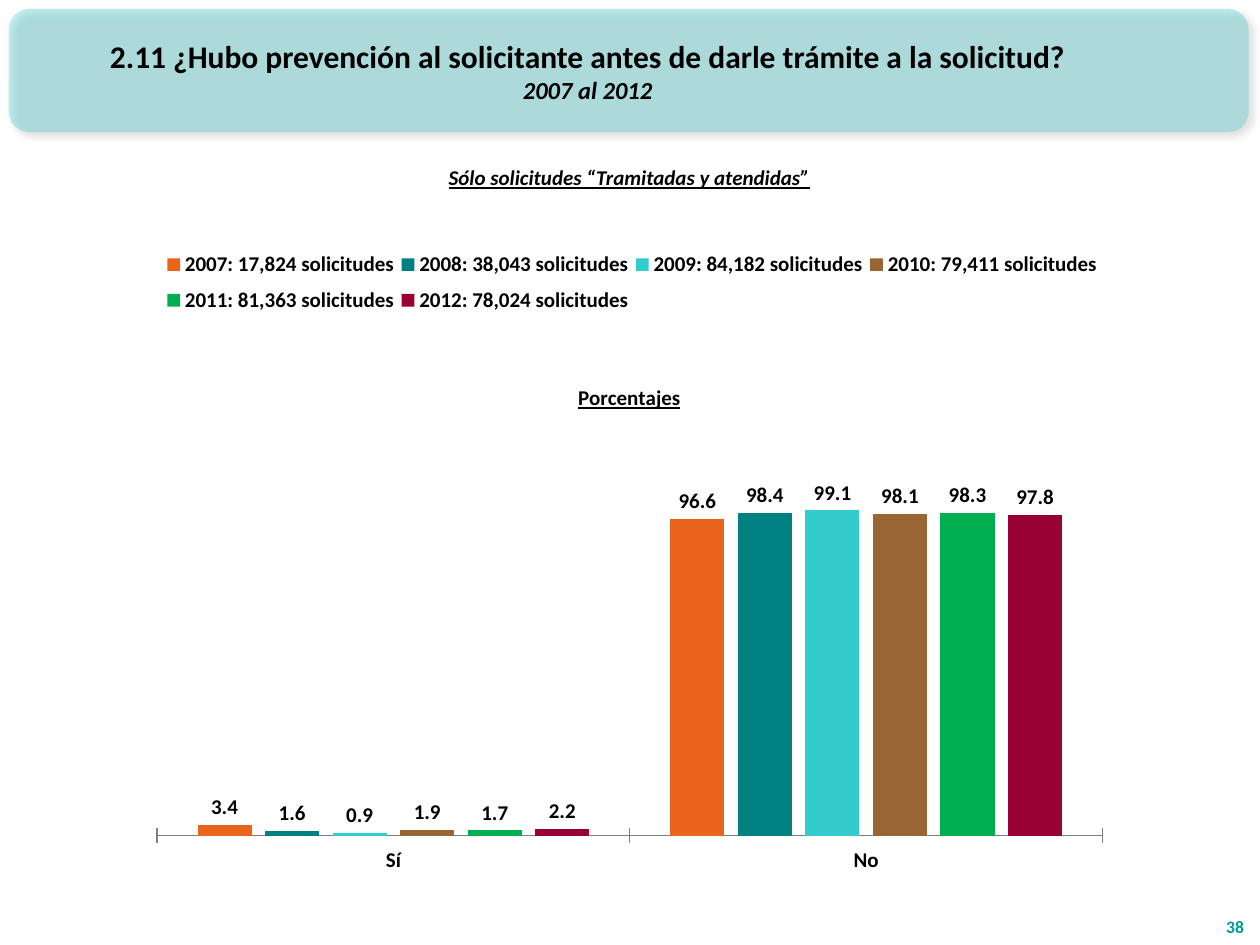
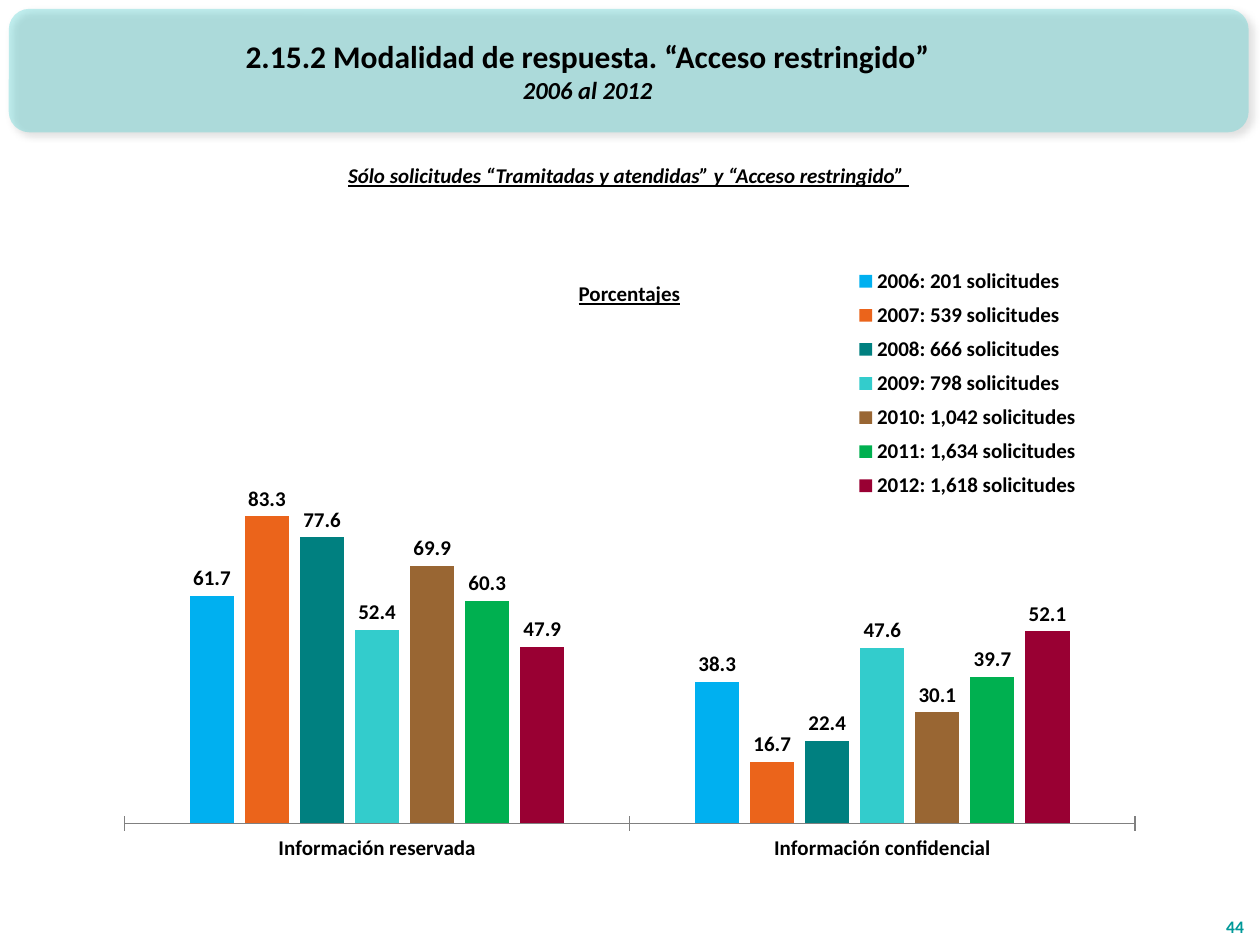
from dataclasses import dataclass

from lxml import etree
from pptx import Presentation
from pptx.chart.data import CategoryChartData
from pptx.dml.color import RGBColor
from pptx.enum.chart import XL_CHART_TYPE, XL_LABEL_POSITION, XL_LEGEND_POSITION, XL_TICK_MARK
from pptx.enum.shapes import MSO_SHAPE
from pptx.enum.text import MSO_ANCHOR, PP_ALIGN
from pptx.oxml import parse_xml
from pptx.oxml.ns import nsdecls, qn
from pptx.util import Inches, Pt

COLUMNS = XL_CHART_TYPE.COLUMN_CLUSTERED
OUTSIDE_END = XL_LABEL_POSITION.OUTSIDE_END
LEGEND_TOP = XL_LEGEND_POSITION.TOP
TICK_CROSS, TICK_NONE = XL_TICK_MARK.CROSS, XL_TICK_MARK.NONE
ROUNDED = MSO_SHAPE.ROUNDED_RECTANGLE
TOP, MIDDLE, BOTTOM = MSO_ANCHOR.TOP, MSO_ANCHOR.MIDDLE, MSO_ANCHOR.BOTTOM
CENTER, RIGHT = PP_ALIGN.CENTER, PP_ALIGN.RIGHT


@dataclass(frozen=True)
class Theme:
    font: str = "Calibri"
    ink: str = "000000"
    band: str = "33CCCC"
    page_number: str = "009999"
    axis: str = "808080"
    title_size: int = 18
    period_size: int = 14
    body_size: int = 12
    number_size: int = 10


THEME = Theme()
YEAR_COLORS = {
    2006: "00B0F0", 2007: "EB641B", 2008: "008080", 2009: "33CCCC",
    2010: "996633", 2011: "00B050", 2012: "990033",
}

# Text formats
TITLE = {"size": Pt(THEME.title_size), "bold": True}
PERIOD = {"size": Pt(THEME.period_size), "bold": True, "italic": True}
BODY = {"size": Pt(THEME.body_size), "bold": True}
HEADING = {**BODY, "underline": True}
SCOPE = {**HEADING, "italic": True}
NUMBER = {"size": Pt(THEME.number_size), "bold": True}


@dataclass(frozen=True)
class Box:
    left: int
    top: int
    width: int
    height: int

    def inner(self, x, y, w, h):
        """Inner box given in percent of this one."""
        return Box(int(self.left + self.width * x / 100), int(self.top + self.height * y / 100),
                   int(self.width * w / 100), int(self.height * h / 100))

    @property
    def place(self):
        return self.left, self.top, self.width, self.height


PAGE = Box(0, 0, Inches(10), Inches(7.5))


def apply(target, values):
    for name, value in values.items():
        setattr(target, name, value)


def style_font(font, values, color=THEME.ink):
    apply(font, {"name": THEME.font, **values})
    font.color.rgb = RGBColor.from_string(color)


def add_text(slide, box, lines, anchor=TOP, align=CENTER, color=THEME.ink):
    """Write (text, format) pairs, one paragraph each."""
    frame = slide.shapes.add_textbox(*box.place).text_frame
    apply(frame, {"word_wrap": True, "vertical_anchor": anchor})
    for index, (text, values) in enumerate(lines):
        paragraph = frame.add_paragraph() if index else frame.paragraphs[0]
        paragraph.alignment = align
        run = paragraph.add_run()
        run.text = text
        style_font(run.font, values, color)


def title_band(slide, box, title, period):
    # Translucent band with a soft shadow
    band = slide.shapes.add_shape(ROUNDED, *box.inner(0.7, 6.67, 98.4, 93.33).place)
    band.fill.solid()
    band.fill.fore_color.rgb = RGBColor.from_string(THEME.band)
    band.line.fill.background()
    properties = band._element.spPr
    tint = properties.find(qn("a:solidFill"))[0]
    etree.SubElement(tint, qn("a:alpha"), val="30000")
    properties.append(parse_xml(
        f'<a:effectLst {nsdecls("a")}><a:outerShdw blurRad="{Pt(4)}" dist="{Pt(3)}"'
        ' dir="2700000" algn="tl" rotWithShape="0"><a:srgbClr val="000000">'
        '<a:alpha val="40000"/></a:srgbClr></a:outerShdw></a:effectLst>'))
    # Title and period
    add_text(slide, box.inner(0.8, 8.57, 91.7, 89.52), [(title, TITLE), (period, PERIOD)], MIDDLE)


def set_layout(element, index, **percents):
    """Fix the place of a chart element, in percent of the chart."""
    for old in element.findall(qn("c:layout")):
        element.remove(old)
    layout = etree.Element(qn("c:layout"))
    manual = etree.SubElement(layout, qn("c:manualLayout"))
    if index == 0:
        etree.SubElement(manual, qn("c:layoutTarget"), val="inner")
    for axis in "xy":
        etree.SubElement(manual, qn(f"c:{axis}Mode"), val="edge")
    for side, percent in percents.items():
        etree.SubElement(manual, qn(f"c:{side}"), val=f"{percent / 100:.4f}")
    element.insert(index, layout)


def percentage_chart(slide, box, content):
    # Values by answer and year
    data = CategoryChartData(number_format="0.0")
    data.categories = content["answers"]
    for year, (requests, *shares) in content["years"].items():
        data.add_series(f"{year}: {requests:,} solicitudes", shares)
    chart = slide.shapes.add_chart(COLUMNS, *box.place, data).chart
    style_font(chart.font, BODY)

    # Columns and their labels
    plot = chart.plots[0]
    apply(plot, {"gap_width": content["gap"], "overlap": -25,
                 "vary_by_categories": False, "has_data_labels": True})
    apply(plot.data_labels, {"show_value": True, "number_format": "0.0",
                             "number_format_is_linked": False, "position": OUTSIDE_END})
    for year, series in zip(content["years"], plot.series):
        series.format.fill.solid()
        series.format.fill.fore_color.rgb = RGBColor.from_string(YEAR_COLORS[year])
    set_layout(chart._chartSpace.chart.plotArea, 0, **content["plot"])

    # Axes
    apply(chart.value_axis, {"visible": False, "has_major_gridlines": False,
                             "minimum_scale": 0, "maximum_scale": content["maximum"]})
    apply(chart.category_axis, {"major_tick_mark": TICK_CROSS, "minor_tick_mark": TICK_NONE})
    chart.category_axis.format.line.color.rgb = RGBColor.from_string(THEME.axis)

    # Legend
    chart.has_legend = True
    apply(chart.legend, {"position": LEGEND_TOP, "include_in_layout": False})
    set_layout(chart.legend._element, 1, **content["legend"])

    # Heading inside the chart
    chart.has_title = "heading" in content
    if chart.has_title:
        run = chart.chart_title.text_frame.paragraphs[0].add_run()
        run.text = "Porcentajes"
        style_font(run.font, HEADING)
        set_layout(chart.chart_title._element, 1, **content["heading"])


def chart_slide(deck, content):
    slide = deck.slides.add_slide(deck.slide_layouts[6])
    title_band(slide, PAGE.inner(0, 0, 100, 14), content["title"], content["period"])
    percentage_chart(slide, PAGE.inner(*content["chart_box"]), content)
    add_text(slide, PAGE.inner(*content["scope_box"]), [(content["scope"], SCOPE)])
    if "heading_box" in content:
        add_text(slide, PAGE.inner(*content["heading_box"]), [("Porcentajes", HEADING)])
    add_text(slide, PAGE.inner(95.7, 94.53, 4, 5.33), [(content["number"], NUMBER)],
             BOTTOM, RIGHT, THEME.page_number)


# Boxes are in percent of the slide, chart elements in percent of the chart;
# each year holds its number of requests and the share of each answer
SLIDES = [
    {
        "title": "2.11 ¿Hubo prevención al solicitante antes de darle trámite a la solicitud?",
        "period": "2007 al 2012",
        "scope": "Sólo solicitudes “Tramitadas y atendidas”",
        "scope_box": (23.1, 16.8, 53.7, 4),
        "number": "38",
        "chart_box": (10.9, 23.73, 78.1, 72.4),
        "plot": {"x": 2, "y": 31.8, "w": 96.1, "h": 57.6},
        "legend": {"x": 2.3, "y": 2.5, "w": 96, "h": 12},
        "heading": {"x": 44.4, "y": 22.7},
        "gap": 150,
        "maximum": 120,
        "answers": ["Sí", "No"],
        "years": {
            2007: (17824, 3.4, 96.6),
            2008: (38043, 1.6, 98.4),
            2009: (84182, 0.9, 99.1),
            2010: (79411, 1.9, 98.1),
            2011: (81363, 1.7, 98.3),
            2012: (78024, 2.2, 97.8),
        },
    },
    {
        "title": "2.15.2 Modalidad de respuesta. “Acceso restringido”",
        "period": "2006 al 2012",
        "scope": "Sólo solicitudes “Tramitadas y atendidas” y “Acceso restringido” ",
        "scope_box": (18.3, 16.53, 63.2, 4),
        "heading_box": (43, 29.07, 13.9, 4),
        "number": "44",
        "chart_box": (8.9, 25.33, 82, 71.87),
        "plot": {"x": 1.2, "y": 29, "w": 97.8, "h": 57},
        "legend": {"x": 71.3, "y": 3, "w": 23, "h": 36.5},
        "gap": 297,
        "maximum": 105,
        "answers": ["Información reservada", "Información confidencial"],
        "years": {
            2006: (201, 61.7, 38.3),
            2007: (539, 83.3, 16.7),
            2008: (666, 77.6, 22.4),
            2009: (798, 52.4, 47.6),
            2010: (1042, 69.9, 30.1),
            2011: (1634, 60.3, 39.7),
            2012: (1618, 47.9, 52.1),
        },
    },
]


def main():
    deck = Presentation()
    apply(deck, {"slide_width": PAGE.width, "slide_height": PAGE.height})
    for content in SLIDES:
        chart_slide(deck, content)
    deck.save("out.pptx")


if __name__ == "__main__":
    main()
